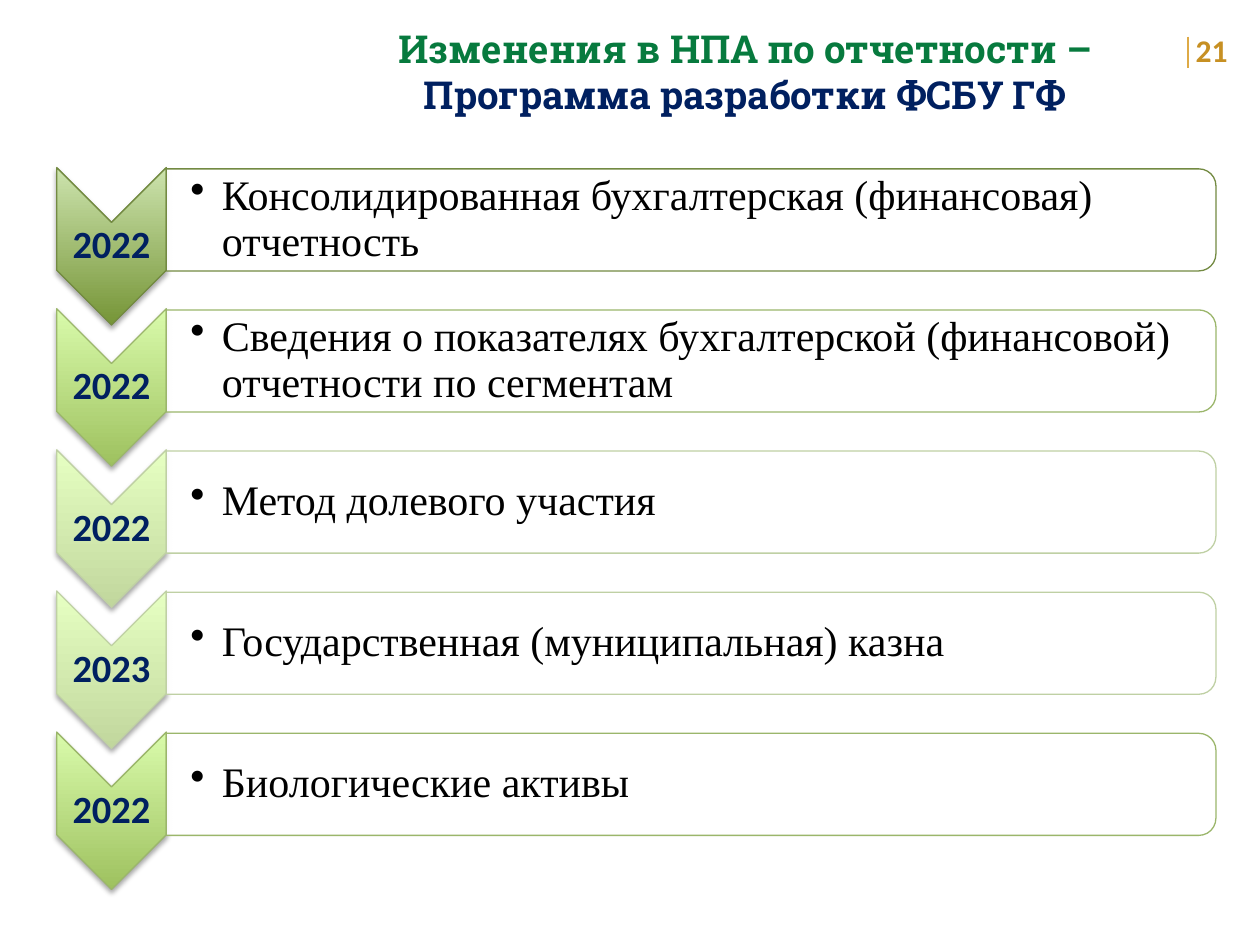
import pptx
import pptx.util
import pptx.dml.color
import pptx.enum.shapes
import pptx.enum.text
import pptx.oxml
import pptx.oxml.ns
from dataclasses import dataclass

Inches = pptx.util.Inches
Pt = pptx.util.Pt
qn = pptx.oxml.ns.qn
Shape = pptx.enum.shapes.MSO_SHAPE
Align = pptx.enum.text.PP_ALIGN
Anchor = pptx.enum.text.MSO_ANCHOR
NS = 'xmlns:a="http://schemas.openxmlformats.org/drawingml/2006/main"'


@dataclass(frozen=True)
class Font:
    name: str
    size: float
    color: str
    bold: bool = False


@dataclass(frozen=True)
class Tone:
    dark: str
    light: str
    edge: str


class Theme:
    white = "FFFFFF"
    rule = "DEAA46"
    thin = 0.75
    head = Font("Roboto Slab", 22, "077A3E", True)
    sub = Font("Roboto Slab", 22, "002060", True)
    page = Font("Calibri", 18, "C79023", True)
    year = Font("Calibri", 22, "002060", True)
    body = Font("Times New Roman", 24, "000000")
    deep = Tone("769537", "CCE3AD", "738A42")
    mid = Tone("9EC15F", "D9FBAB", "9BB66B")
    pale = Tone("C1D79D", "E6FFC2", "BFD0A4")


def rgb(code):
    return pptx.dml.color.RGBColor.from_string(code)


def add_xml(parent, body):
    parent.append(pptx.oxml.parse_xml(body))


class Deck:
    def __init__(self, theme):
        self.theme = theme
        self.show = pptx.Presentation()
        self.show.slide_width = Inches(10)
        self.show.slide_height = Inches(7.5)
        self.slide = self.show.slides.add_slide(self.show.slide_layouts[6])

    def text(self, box, lines, align=Align.LEFT, anchor=Anchor.TOP,
             pads=None, space=None, left=0, bullet=False):
        """Add a text box with one paragraph for each (words, font) pair."""
        shape = self.slide.shapes.add_textbox(*map(Inches, box))
        frame = shape.text_frame
        frame.word_wrap = True
        frame.vertical_anchor = anchor
        if pads:
            (frame.margin_left, frame.margin_top,
             frame.margin_right, frame.margin_bottom) = map(Inches, pads)
        for i, (words, font) in enumerate(lines):
            para = frame.add_paragraph() if i else frame.paragraphs[0]
            para.alignment = align
            if space:
                para.line_spacing = space
            props = para._p.get_or_add_pPr()
            props.set("marL", str(Inches(left)))
            if bullet:
                props.set("indent", str(-Inches(left)))
                add_xml(props, f'<a:buChar {NS} char="•"/>')
            run = para.add_run()
            run.text = words
            run.font.name = font.name
            run.font.size = Pt(font.size)
            run.font.bold = font.bold
            run.font.color.rgb = rgb(font.color)
        return shape

    def turned(self, kind, mid_x, mid_y, wide, high, edge):
        """Add a shape rotated by 90 degrees; wide and high are as seen."""
        shape = self.slide.shapes.add_shape(
            kind, Inches(mid_x - high / 2), Inches(mid_y - wide / 2),
            Inches(high), Inches(wide))
        shape.rotation = 90
        shape.shadow.inherit = False
        shape.line.color.rgb = rgb(edge)
        shape.line.width = Pt(self.theme.thin)
        return shape

    def arrow(self, mid_x, mid_y, wide, high, tone):
        shape = self.turned(Shape.CHEVRON, mid_x, mid_y, wide, high, tone.edge)
        shape.fill.gradient()
        shape.fill.gradient_angle = 90
        for stop, code in zip(shape.fill.gradient_stops, (tone.dark, tone.light)):
            stop.color.rgb = rgb(code)
        props = shape._element.spPr
        props.find(qn("a:gradFill")).set("rotWithShape", "0")
        add_xml(props.find(qn("a:effectLst")),
                f'<a:outerShdw {NS} blurRad="{Pt(3.1)}" dist="{Pt(1.8)}" '
                'dir="5400000" rotWithShape="0"><a:srgbClr val="000000">'
                '<a:alpha val="35000"/></a:srgbClr></a:outerShdw>')

    def bar(self, mid_x, mid_y, wide, high, tone):
        shape = self.turned(Shape.ROUND_2_SAME_RECTANGLE, mid_x, mid_y,
                            wide, high, tone.edge)
        shape.fill.solid()
        shape.fill.fore_color.rgb = rgb(self.theme.white)
        color = shape._element.spPr.find(qn("a:solidFill")).find(qn("a:srgbClr"))
        add_xml(color, f'<a:alpha {NS} val="90000"/>')

    def line(self, x1, y1, x2, y2, code, width):
        link = self.slide.shapes.add_connector(
            pptx.enum.shapes.MSO_CONNECTOR.STRAIGHT,
            *map(Inches, (x1, y1, x2, y2)))
        link.line.color.rgb = rgb(code)
        link.line.width = Pt(width)
        add_xml(link._element.spPr, f"<a:effectLst {NS}/>")

    def step(self, top, year, words, tone):
        """Add one row: the year arrow and the bar with its standard."""
        self.arrow(0.885, top + 0.615, 0.87, 1.25, tone)
        self.text((0.45, top + 0.43, 0.87, 0.37), [(year, self.theme.year)],
                  Align.CENTER, Anchor.MIDDLE, (0.02,) * 4, 0.9)
        self.bar(5.485, top + 0.405, 8.33, 0.81, tone)
        self.text((1.32, top + 0.04, 8.29, 0.73), [(words, self.theme.body)],
                  Align.LEFT, Anchor.MIDDLE, (0.19, 0.02, 0.02, 0.02), 0.9,
                  0.25, True)


def main():
    theme = Theme()
    deck = Deck(theme)
    title = deck.text((2.39, 0.15, 6.99, 0.84),
                      [("Изменения в НПА по отчетности –", theme.head),
                       ("Программа разработки ФСБУ ГФ", theme.sub)],
                      Align.CENTER, left=0.06)
    title.text_frame.auto_size = pptx.enum.text.MSO_AUTO_SIZE.SHAPE_TO_FIT_TEXT
    deck.text((9.39, 0.2, 0.61, 0.4), [("21", theme.page)])
    deck.line(9.43, 0.29, 9.43, 0.54, theme.rule, 1)

    steps = [
        ("2022", "Консолидированная бухгалтерская (финансовая) отчетность",
         theme.deep),
        ("2022", "Сведения о показателях бухгалтерской (финансовой) "
                 "отчетности по сегментам", theme.mid),
        ("2022", "Метод долевого участия", theme.pale),
        ("2023", "Государственная (муниципальная) казна", theme.pale),
        ("2022", "Биологические активы", theme.mid),
    ]
    first, pitch = 1.34, 1.12
    for i, (year, words, tone) in enumerate(steps):
        deck.step(first + i * pitch, year, words, tone)
    deck.show.save("out.pptx")


if __name__ == "__main__":
    main()
